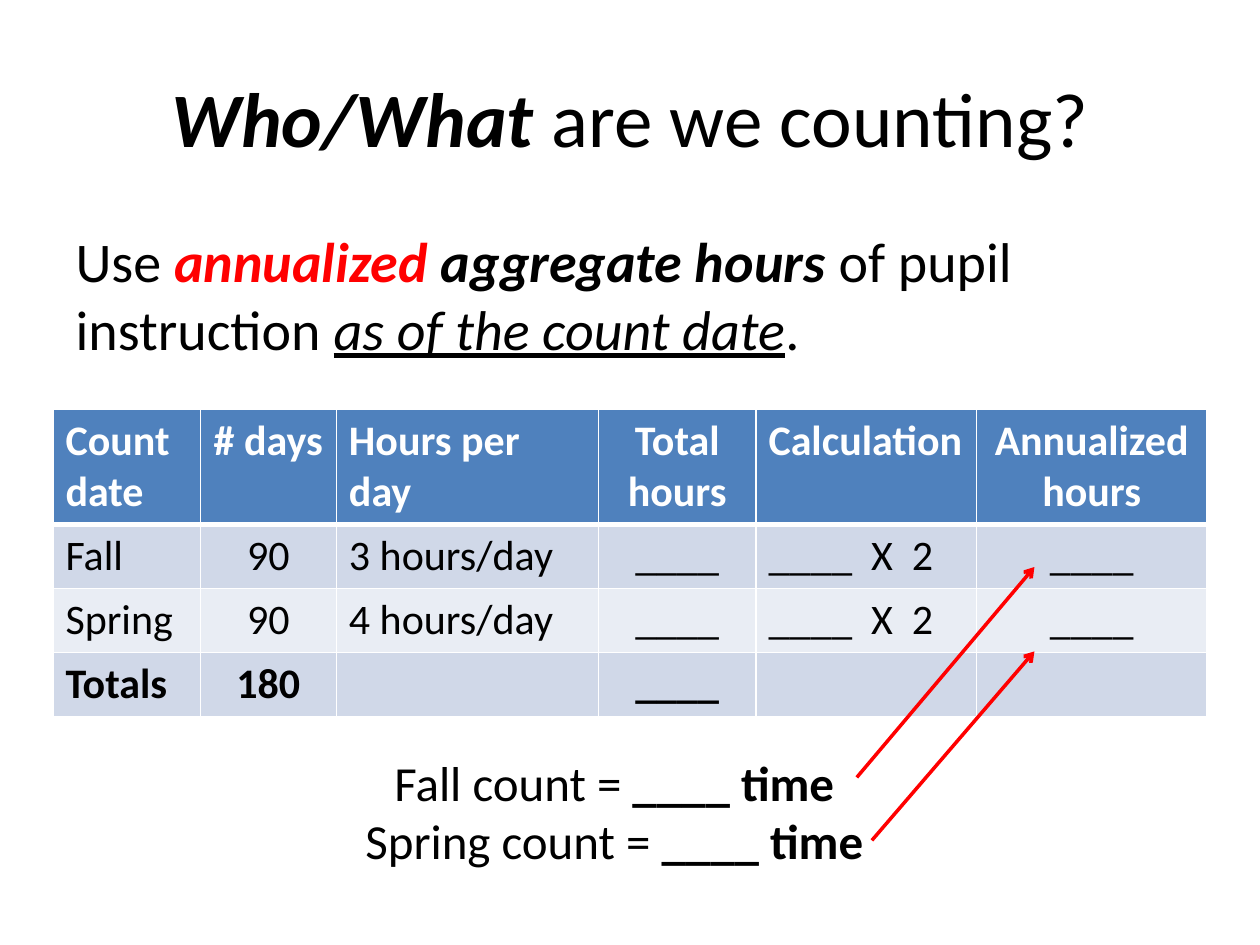
"""Build the slide on annualized hours of pupil instruction."""
from lxml import etree
from pptx import Presentation
from pptx import util as u
from pptx.dml.color import RGBColor
from pptx.enum import shapes, text
from pptx.oxml.ns import qn

FONT = "Calibri"
COLORS = {"ink": "000000", "accent": "FF0000", "white": "FFFFFF",
          "header": "4F81BD", "odd": "D0D8E8", "even": "E9EDF4"}

TITLE = [[("Who/What ", "bi"), ("are we counting?", "")]]
BODY = [[("Use ", ""), ("annualized", "bia"), (" aggregate hours ", "bi"),
         ("of pupil instruction ", ""), ("as of the count date", "iu"), (".", "")]]
COUNTS = [[("Fall count = ", ""), ("____ time", "b")],
          [("Spring count = ", ""), ("____ time", "b")]]
ROWS = [
    ["Count date", "# days", "Hours per day", "Total hours", "Calculation", "Annualized hours"],
    ["Fall", "90", "3 hours/day", "____", "____  X  2", "____"],
    ["Spring", "90", "4 hours/day", "____", "____  X  2", "____"],
    ["Totals", "180", "", "____", "", ""],
]
COLUMN_WIDTHS = [1.17, 1.08, 2.08, 1.25, 1.75, 1.83]
ROW_HEIGHTS = [0.9, 0.5, 0.5, 0.5]
CENTERED_COLUMNS = {1, 3, 5}
ARROWS = [(6.8, 6.17, 8.21, 4.5), (6.92, 6.67, 8.21, 5.17)]


def rgb(name):
    return RGBColor.from_string(COLORS[name])


def inches(*values):
    return [u.Inches(value) for value in values]


def place(shape, *box):
    shape.left, shape.top, shape.width, shape.height = inches(*box)


def add_run(paragraph, words, size, style="", color="ink"):
    run = paragraph.add_run()
    run.text = words
    font = run.font
    font.name, font.size = FONT, u.Pt(size)
    font.bold, font.italic, font.underline = (mark in style for mark in "biu")
    font.color.rgb = rgb("accent" if "a" in style else color)


def write(frame, paragraphs, size, align):
    frame.word_wrap = True
    for index, runs in enumerate(paragraphs):
        paragraph = frame.add_paragraph() if index else frame.paragraphs[0]
        paragraph.alignment = align
        for words, style in runs:
            add_run(paragraph, words, size, style)


def set_borders(cell, bottom_width):
    properties = cell._tc.get_or_add_tcPr()
    for side, width in zip("LRTB", (1, 1, 1, bottom_width)):
        line = etree.SubElement(properties, qn(f"a:ln{side}"), w=str(u.Pt(width)))
        fill = etree.SubElement(line, qn("a:solidFill"))
        etree.SubElement(fill, qn("a:srgbClr"), val=COLORS["white"])


def add_hours_table(slide):
    box = inches(0.42, 3.25, sum(COLUMN_WIDTHS), sum(ROW_HEIGHTS))
    table = slide.shapes.add_table(len(ROWS), len(COLUMN_WIDTHS), *box).table
    for column, width in zip(table.columns, COLUMN_WIDTHS):
        column.width = u.Inches(width)
    for row_index, values in enumerate(ROWS):
        table.rows[row_index].height = u.Inches(ROW_HEIGHTS[row_index])
        header = row_index == 0
        fill = "header" if header else "odd" if row_index % 2 else "even"
        style = "b" if row_index in (0, len(ROWS) - 1) else ""
        for column_index, value in enumerate(values):
            cell = table.cell(row_index, column_index)
            set_borders(cell, 3 if header else 1)
            cell.fill.solid()
            cell.fill.fore_color.rgb = rgb(fill)
            paragraph = cell.text_frame.paragraphs[0]
            if column_index in CENTERED_COLUMNS:
                paragraph.alignment = text.PP_ALIGN.CENTER
            if value:
                add_run(paragraph, value, 24, style, "white" if header else "ink")


def add_arrow(slide, *ends):
    arrow = slide.shapes.add_connector(shapes.MSO_CONNECTOR.STRAIGHT, *inches(*ends))
    arrow.line.color.rgb = rgb("accent")
    arrow.line.width = u.Pt(2)
    etree.SubElement(arrow.line._get_or_add_ln(), qn("a:tailEnd"), type="arrow")
    etree.SubElement(arrow._element.spPr, qn("a:effectLst"))


def main():
    presentation = Presentation()
    presentation.slide_width, presentation.slide_height = inches(10, 7.5)
    slide = presentation.slides.add_slide(presentation.slide_layouts[1])

    title, body = slide.placeholders
    place(title, 0.5, 0.3, 9, 1.25)
    write(title.text_frame, TITLE, 44, text.PP_ALIGN.CENTER)
    place(body, 0.5, 1.75, 9, 1.33)
    write(body.text_frame, BODY, 32, text.PP_ALIGN.LEFT)
    properties = body.text_frame.paragraphs[0]._p.get_or_add_pPr()
    properties.set("marL", "0")
    properties.set("indent", "0")
    etree.SubElement(properties, qn("a:buNone"))

    add_hours_table(slide)
    counts = slide.shapes.add_textbox(*inches(2.5, 5.92, 4.75, 1.04))
    write(counts.text_frame, COUNTS, 28, text.PP_ALIGN.CENTER)
    counts.text_frame.auto_size = text.MSO_AUTO_SIZE.SHAPE_TO_FIT_TEXT
    for ends in ARROWS:
        add_arrow(slide, *ends)
    presentation.save("out.pptx")


if __name__ == "__main__":
    main()
